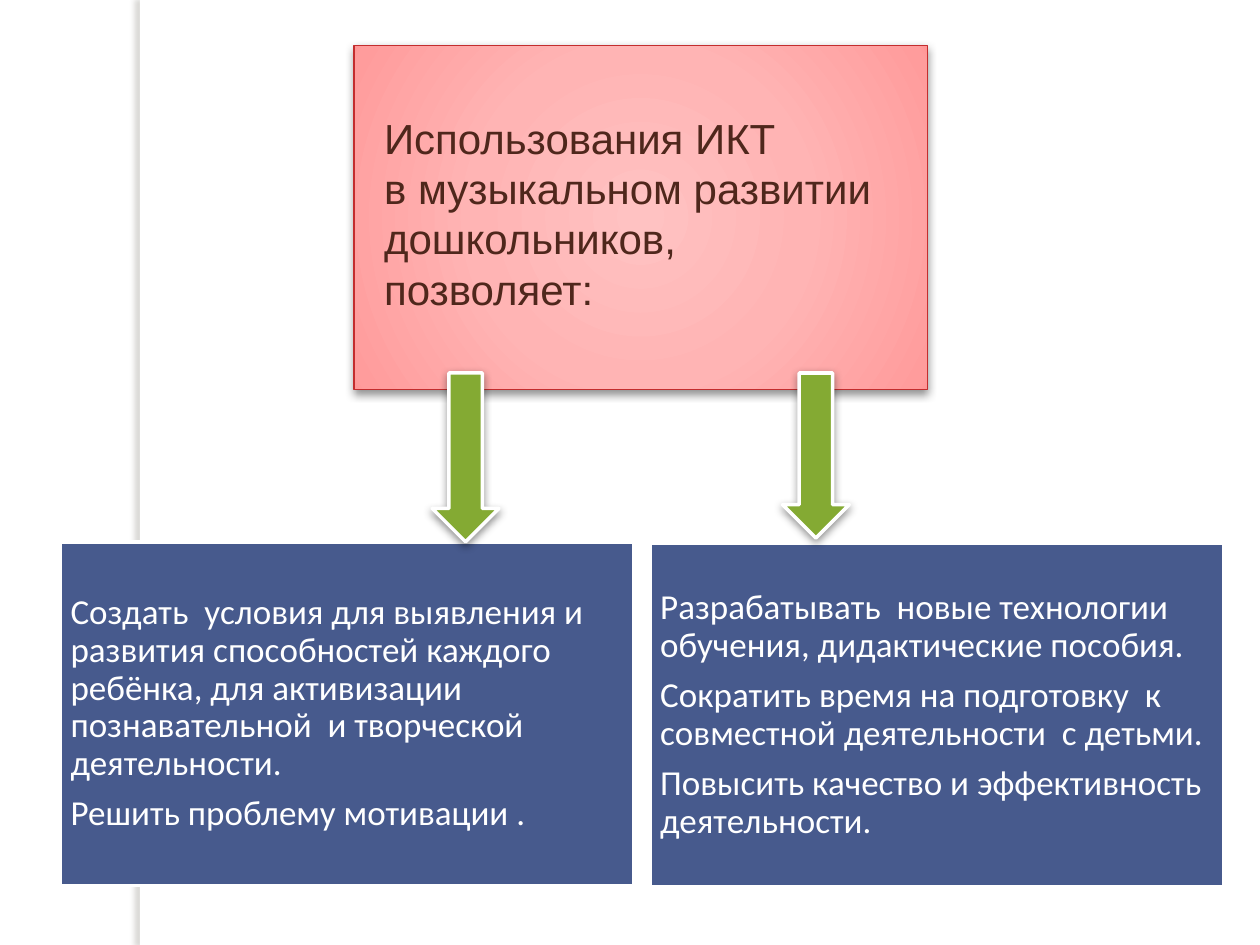
from lxml import etree
from pptx import Presentation
from pptx.dml.color import RGBColor
from pptx.enum.shapes import MSO_SHAPE
from pptx.enum.text import MSO_ANCHOR, PP_ALIGN
from pptx.oxml import parse_xml
from pptx.oxml.ns import nsdecls, qn
from pptx.util import Inches, Pt

WHITE = RGBColor(0xFF, 0xFF, 0xFF)
BLUE = RGBColor(0x47, 0x5A, 0x8D)
GREEN = RGBColor(0x84, 0xAA, 0x33)
RED = RGBColor(0xC3, 0x2D, 0x2E)
BROWN = RGBColor(0x4F, 0x27, 0x1C)
BLACK = RGBColor(0x00, 0x00, 0x00)
GREY = RGBColor(0x73, 0x6F, 0x63)
PINKS = [(0, RGBColor(0xFF, 0xC2, 0xC2)), (50, RGBColor(0xFF, 0xB4, 0xB4)),
         (97, RGBColor(0xFF, 0x9C, 0x9C)), (100, RGBColor(0xFF, 0x95, 0x95))]
CARD_W, CARD_H = 4.55, 2.73

prs = Presentation()
prs.slide_width, prs.slide_height = Inches(10), Inches(7.5)
slide = prs.slides.add_slide(prs.slide_layouts[6])


def add_box(kind, left, top, width, height, fill=None, line=None, weight=2):
    box = slide.shapes.add_shape(kind, Inches(left), Inches(top),
                                 Inches(width), Inches(height))
    box.shadow.inherit = False
    if fill is not None:
        box.fill.solid()
        box.fill.fore_color.rgb = fill
    if line is None:
        box.line.fill.background()
    else:
        box.line.color.rgb = line
        box.line.width = Pt(weight)
    return box


def add_shadow(box, color, alpha, blur, dist, angle):
    """Give the box an outer shadow: alpha in percent, blur and dist in points."""
    effects = box._element.spPr.find(qn("a:effectLst"))
    effects.append(parse_xml(
        f'<a:outerShdw {nsdecls("a")} blurRad="{Pt(blur)}" dist="{Pt(dist)}" '
        f'dir="{angle * 60000}" rotWithShape="0"><a:srgbClr val="{color}">'
        f'<a:alpha val="{alpha * 1000}"/></a:srgbClr></a:outerShdw>'))


# Side band
band = add_box(MSO_SHAPE.RECTANGLE, 1.11, 0, 0.08, 7.5, WHITE)
add_shadow(band, GREY, 25, 3, 3, 180)

# Blue cards
cards = [
    (0.48, 4.3, [
        "Создать  условия для выявления и развития способностей каждого "
        "ребёнка, для активизации познавательной  и творческой деятельности.",
        "Решить проблему мотивации ."]),
    (5.16, 4.31, [
        "Разрабатывать  новые технологии обучения, дидактические пособия.",
        "Сократить время на подготовку  к совместной деятельности  с детьми.",
        "Повысить качество и эффективность деятельности."]),
]
for left, top, lines in cards:
    card = add_box(MSO_SHAPE.RECTANGLE, left, top, CARD_W, CARD_H, BLUE, WHITE)
    frame = card.text_frame
    frame.text = "\n".join(lines)
    frame.word_wrap = True
    frame.vertical_anchor = MSO_ANCHOR.MIDDLE
    for side in ("left", "top", "right", "bottom"):
        setattr(frame, f"margin_{side}", Inches(0.08))
    for para in frame.paragraphs:
        look = {"alignment": PP_ALIGN.LEFT, "line_spacing": 0.9,
                "space_after": Pt(7)}
        for name, value in look.items():
            setattr(para, name, value)
        para.font.size, para.font.name = Pt(20), "Calibri"
        para.font.color.rgb = WHITE

# Pink heading panel with a round gradient
panel = add_box(MSO_SHAPE.RECTANGLE, 2.81, 0.36, CARD_W, CARD_H,
                line=RED, weight=0.75)
panel.fill.gradient()
grad = panel._element.spPr.find(qn("a:gradFill"))
for child in list(grad):
    grad.remove(child)
stops = etree.SubElement(grad, qn("a:gsLst"))
for pos, color in PINKS:
    stop = etree.SubElement(stops, qn("a:gs"), pos=str(pos * 1000))
    etree.SubElement(stop, qn("a:srgbClr"), val=str(color))
round_path = etree.SubElement(grad, qn("a:path"), path="circle")
etree.SubElement(round_path, qn("a:fillToRect"),
                 {side: "50000" for side in "ltrb"})
add_shadow(panel, BLACK, 43, 5, 2, 90)

# Arrows to the cards
for left, height in [(6.21, 1.31), (3.43, 1.34)]:
    arrow = add_box(MSO_SHAPE.UP_ARROW, left, 2.96, 0.53, height, GREEN, WHITE)
    arrow.rotation = 180
    add_shadow(arrow, BLACK, 43, 5, 2, 90)

# Heading
head = slide.shapes.add_textbox(Inches(2.95), Inches(0.84),
                                Inches(4.17), Inches(1.72))
frame = head.text_frame
frame.word_wrap = True
frame.text = ("Использования ИКТ\n"
              "в музыкальном развитии дошкольников, позволяет:")
for para in frame.paragraphs:
    para.font.size, para.font.name = Pt(24), "Arial"
    para.font.color.rgb = BROWN

prs.save("out.pptx")
